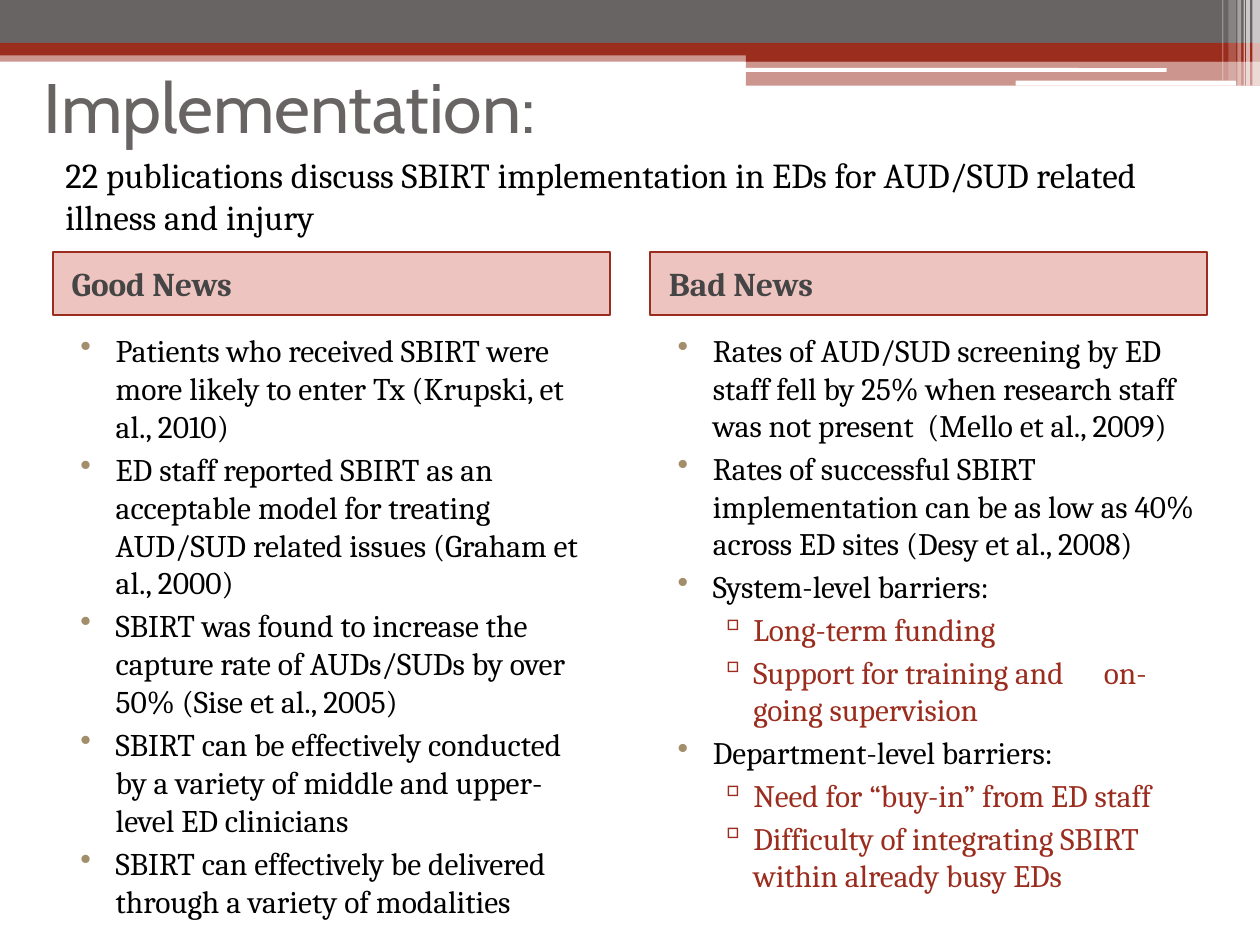
import pptx
import pptx.util
import pptx.dml.color
import pptx.enum.shapes
import pptx.enum.text
import pptx.oxml.ns
import lxml.etree

COLORS = {
    "red": "9B2D1F", "gray": "696464", "white": "FFFFFF", "black": "000000",
    "rose": "BA1500", "charcoal": "454545", "tan": "A28E6A",
}
KINDS = pptx.enum.shapes.MSO_SHAPE
ANCHORS = pptx.enum.text.MSO_ANCHOR

presentation = pptx.Presentation()
presentation.slide_width = pptx.util.Inches(10)
presentation.slide_height = pptx.util.Inches(7.5)
column = presentation.slide_width / 100
row = presentation.slide_height / 75
slide = presentation.slides.add_slide(presentation.slide_layouts[6])


def add_block(left, top, width, height, color=None, opacity=100, kind=KINDS.RECTANGLE):
    box = [int(left * column), int(top * row), int(width * column), int(height * row)]
    if color is None:
        return slide.shapes.add_textbox(*box)
    shape = slide.shapes.add_shape(kind, *box)
    shape.shadow.inherit = False
    shape.fill.solid()
    shape.fill.fore_color.rgb = pptx.dml.color.RGBColor.from_string(COLORS[color])
    shape.line.fill.background()
    if opacity < 100:
        fill_color = shape.fill._xPr.find(".//" + pptx.oxml.ns.qn("a:srgbClr"))
        alpha = lxml.etree.SubElement(fill_color, pptx.oxml.ns.qn("a:alpha"))
        alpha.set("val", str(opacity * 1000))
    return shape


def write_text(shape, lines, size, anchor=ANCHORS.TOP, font="Cambria", bold=False, space=0):
    frame = shape.text_frame
    frame.word_wrap = True
    frame.vertical_anchor = anchor
    for index, (text, color, margin, indent, bullet, bullet_color) in enumerate(lines):
        paragraph = frame.paragraphs[0] if index == 0 else frame.add_paragraph()
        paragraph.alignment = pptx.enum.text.PP_ALIGN.LEFT
        paragraph.space_before = pptx.util.Pt(space)
        run = paragraph.add_run()
        run.text = text
        formats = {"name": font, "size": pptx.util.Pt(size), "bold": bold}
        for attribute, value in formats.items():
            setattr(run.font, attribute, value)
        run.font.color.rgb = pptx.dml.color.RGBColor.from_string(COLORS[color])
        properties = paragraph._p.get_or_add_pPr()
        properties.set("marL", str(int(margin * column)))
        properties.set("indent", str(int(indent * column)))
        if bullet:
            holder = lxml.etree.SubElement(properties, pptx.oxml.ns.qn("a:buClr"))
            shade = lxml.etree.SubElement(holder, pptx.oxml.ns.qn("a:srgbClr"))
            shade.set("val", COLORS[bullet_color])
            mark = lxml.etree.SubElement(properties, pptx.oxml.ns.qn("a:buChar"))
            mark.set("char", bullet)
        if "\t" in text:
            stops = lxml.etree.SubElement(properties, pptx.oxml.ns.qn("a:tabLst"))
            stop = lxml.etree.SubElement(stops, pptx.oxml.ns.qn("a:tab"))
            stop.set("pos", str(int(37.8 * column)))
            stop.set("algn", "l")


bands = [
    (0, 4, 100, 0.9, "red", 50),
    (0, 0, 100, 3.4, "gray", 100),
    (0, 3.4, 100, 1, "red", 100),
    (59.2, 3.9, 40.8, 1, "red", 100),
    (59.2, 4.8, 40.8, 2, "red", 50),
    (59.1, 5.4, 33.5, 0.3, "white", 100, KINDS.ROUNDED_RECTANGLE),
    (80.6, 6.4, 17.5, 0.4, "white", 100, KINDS.ROUNDED_RECTANGLE),
]
for band in bands:
    add_block(*band)

stripes = [
    (99.4, 0.6, 6.8, 65), (98.9, 0.3, 6.8, 65), (98.7, 0.1, 6.8, 60),
    (98.2, 0.3, 6.8, 40), (97.5, 0.6, 6.4, 20), (97, 0.1, 6.4, 30),
]
for left, width, height, opacity in stripes:
    add_block(left, 0, width, height, "white", opacity)

title = add_block(2.5, 2.5, 91.7, 11.7)
write_text(title, [("Implementation:", "gray", 0, 0, None, None)], 40, ANCHORS.MIDDLE, "Cabin")

levels = [("black", 4, -2.8, "•", "tan"), ("red", 7.2, -2.7, "▫", "red")]
panels = [
    ("Good News", 18, [
        (0, "Patients who received SBIRT were more likely to enter Tx (Krupski, et al., 2010)"),
        (0, "ED staff reported SBIRT as an acceptable model for treating AUD/SUD related issues (Graham et al., 2000)"),
        (0, "SBIRT was found to increase the capture rate of AUDs/SUDs by over 50% (Sise et al., 2005)"),
        (0, "SBIRT can be effectively conducted by a variety of middle and upper-level ED clinicians"),
        (0, "SBIRT can effectively be delivered through a variety of modalities"),
    ]),
    ("Bad News", 17.9, [
        (0, "Rates of AUD/SUD screening by ED staff fell by 25% when research staff was not present  (Mello et al., 2009)"),
        (0, "Rates of successful SBIRT implementation can be as low as 40% across ED sites (Desy et al., 2008)"),
        (0, "System-level barriers:"),
        (1, "Long-term funding"),
        (1, "Support for training and\ton-going supervision"),
        (0, "Department-level barriers:"),
        (1, "Need for “buy-in” from ED staff"),
        (1, "Difficulty of integrating SBIRT within already busy EDs"),
    ]),
]
for index, (heading, size, points) in enumerate(panels):
    left = 4.2 + index * 47.4
    header = add_block(left, 20, 44.2, 5, "rose", 25)
    header.line.color.rgb = pptx.dml.color.RGBColor.from_string(COLORS["red"])
    header.line.width = pptx.util.Pt(1)
    heading_line = (heading, "charcoal", 0.5, 0, None, None)
    write_text(header, [heading_line], 19, ANCHORS.MIDDLE, bold=True, space=3)
    body = add_block(left, 25.8, 44.2, 49.2)
    write_text(body, [(text, *levels[level]) for level, text in points], size, space=3)

summary = add_block(4.2, 11.7, 91.7, 11.1)
summary_text = "22 publications discuss SBIRT implementation in EDs for AUD/SUD related illness and injury"
write_text(summary, [(summary_text, "black", 0, 0, None, None)], 20)

presentation.save("out.pptx")
